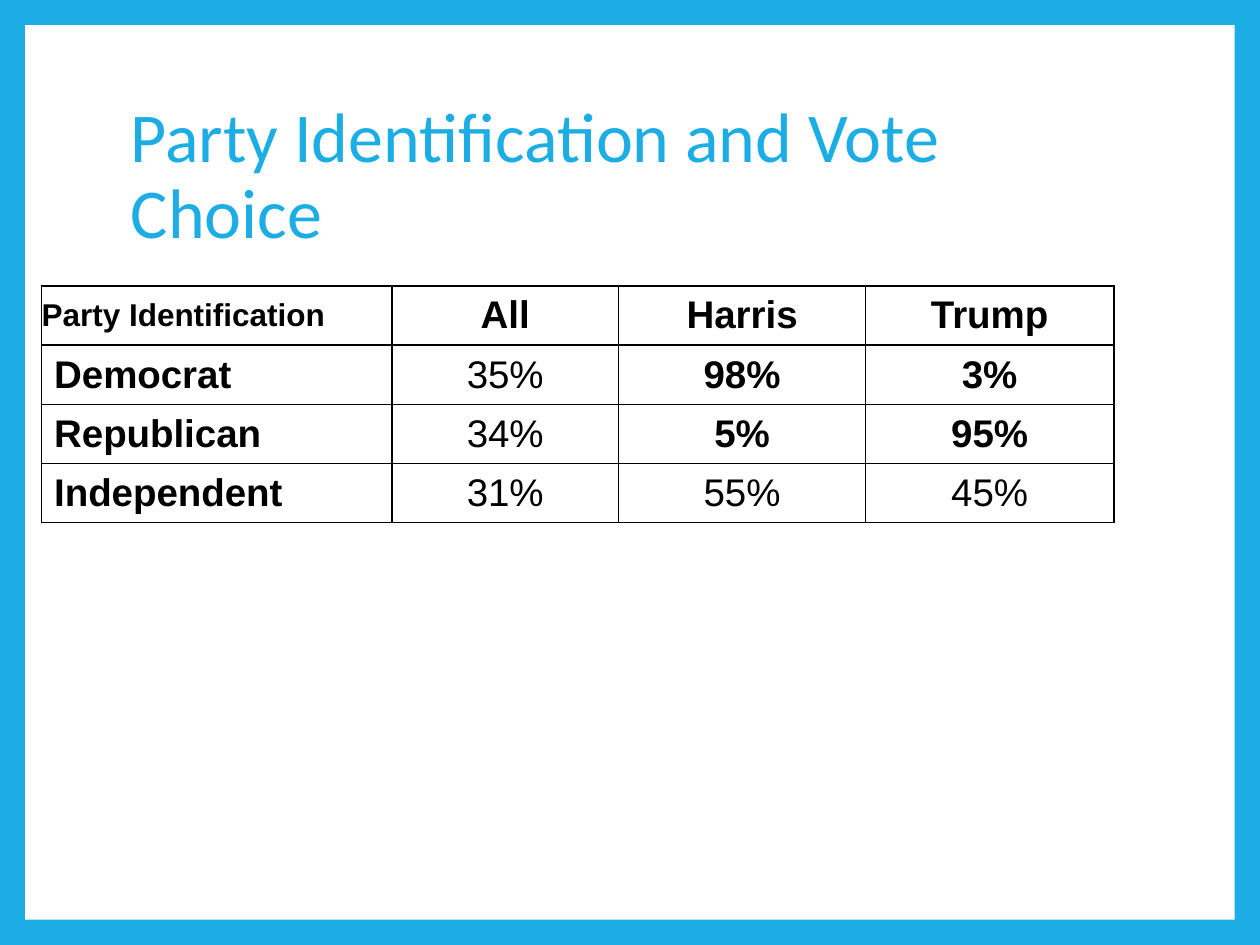
import pptx
import pptx.util
import pptx.dml.color
import pptx.enum.shapes
import pptx.enum.text
import pptx.oxml
import pptx.oxml.ns

Inches, Pt = pptx.util.Inches, pptx.util.Pt
RGBColor = pptx.dml.color.RGBColor
MIDDLE = pptx.enum.text.MSO_ANCHOR.MIDDLE
ALIGN = pptx.enum.text.PP_ALIGN

BLUE = RGBColor(0x1C, 0xAD, 0xE4)
WHITE = RGBColor(0xFF, 0xFF, 0xFF)
BLACK = RGBColor(0, 0, 0)

RESULTS = [
    ["Party Identification", "All", "Harris", "Trump"],
    ["Democrat", "35%", "98%", "3%"],
    ["Republican", "34%", "5%", "95%"],
    ["Independent", "31%", "55%", "45%"],
]
COLUMN_WIDTHS = [2.78, 1.8, 1.96, 1.97]
ROW_HEIGHT = 0.47


def format_run(run, font, size, color, bold=False):
    run.font.name = font
    run.font.size = Pt(size)
    run.font.color.rgb = color
    run.font.bold = bold


def add_borders(cell):
    properties = cell._tc.get_or_add_tcPr()
    for side in ("lnL", "lnR", "lnT", "lnB"):
        properties.append(pptx.oxml.parse_xml(
            f'<a:{side} {pptx.oxml.ns.nsdecls("a")} w="{Pt(1)}">'
            f'<a:solidFill><a:srgbClr val="{BLACK}"/></a:solidFill></a:{side}>'))


presentation = pptx.Presentation()
presentation.slide_width = Inches(10)
presentation.slide_height = Inches(7.5)
slide = presentation.slides.add_slide(presentation.slide_layouts[6])

# Blue background with a white panel
slide.background.fill.solid()
slide.background.fill.fore_color.rgb = BLUE
panel = slide.shapes.add_shape(
    pptx.enum.shapes.MSO_SHAPE.RECTANGLE,
    Inches(0.2), Inches(0.2), Inches(9.6), Inches(7.1))
panel.shadow.inherit = False
panel.fill.solid()
panel.fill.fore_color.rgb = WHITE
panel.line.fill.background()

# Vote table
votes_frame = slide.shapes.add_table(
    len(RESULTS), len(COLUMN_WIDTHS), Inches(0.33), Inches(2.27),
    Inches(sum(COLUMN_WIDTHS)), Inches(ROW_HEIGHT * len(RESULTS)))
votes = votes_frame.table
votes.first_row = False
votes.horz_banding = False
for column, width in zip(votes.columns, COLUMN_WIDTHS):
    column.width = Inches(width)

for r, result in enumerate(RESULTS):
    votes.rows[r].height = Inches(ROW_HEIGHT)
    for c, text in enumerate(result):
        cell = votes.cell(r, c)
        add_borders(cell)
        cell.fill.background()
        cell.vertical_anchor = MIDDLE
        cell.text_frame.text = text
        paragraph = cell.text_frame.paragraphs[0]
        paragraph.alignment = ALIGN.CENTER if c else ALIGN.LEFT
        hanging = paragraph._p.get_or_add_pPr()
        hanging.set("marL", str(Inches(0.38)))
        hanging.set("indent", str(Inches(-0.38)))
        # Headings and the two parties' candidate shares are bold
        bold = r == 0 or c == 0 or (c > 1 and r < 3)
        format_run(paragraph.runs[0], "Arial", 22 if r or c else 18, BLACK, bold)

corner = votes.cell(0, 0)
corner.margin_left = corner.margin_right = 0

# Title
title = slide.shapes.add_textbox(
    Inches(0.94), Inches(0.67), Inches(8.1), Inches(1.48)).text_frame
title.word_wrap = True
title.vertical_anchor = MIDDLE
title.text = "Party Identification and Vote Choice"
title.paragraphs[0].line_spacing = 0.9
format_run(title.paragraphs[0].runs[0], "Calibri", 40, BLUE)

presentation.save("out.pptx")
